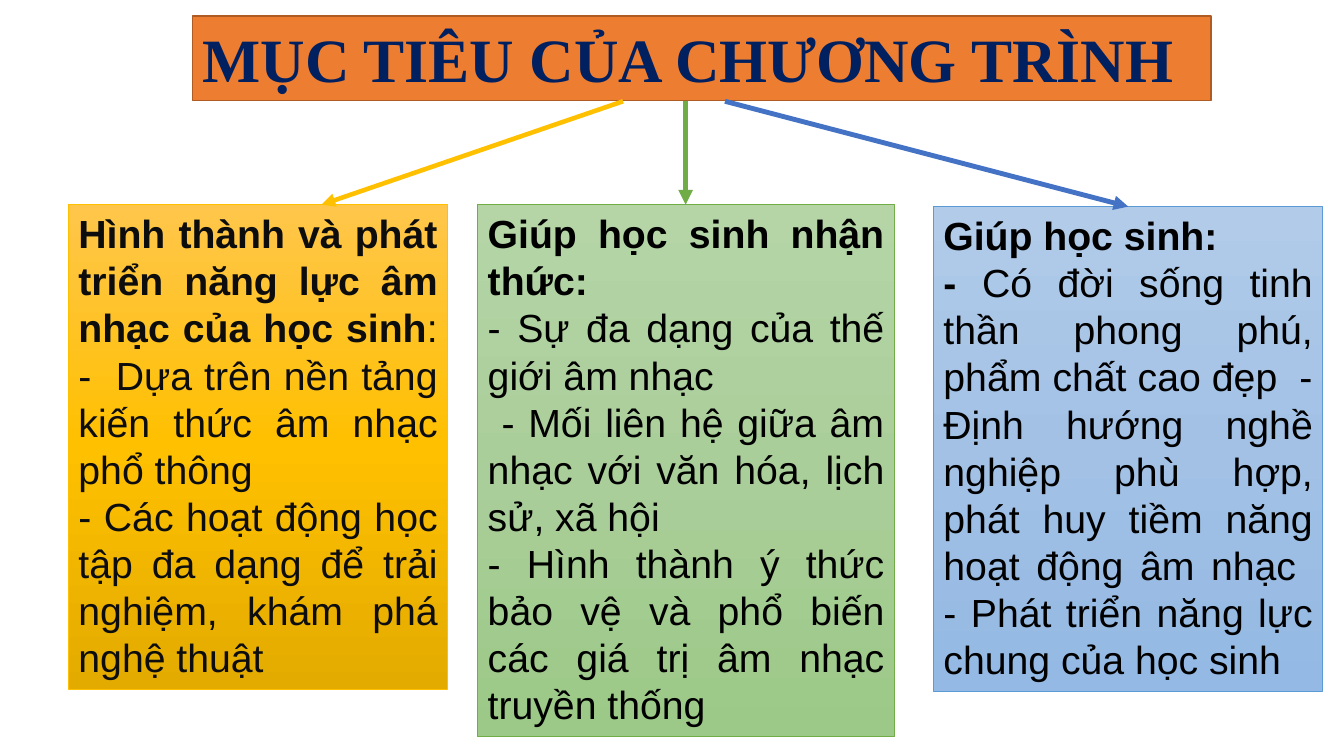
from lxml import etree
from pptx import Presentation
from pptx.dml.color import RGBColor
from pptx.enum.shapes import MSO_CONNECTOR, MSO_SHAPE
from pptx.enum.text import MSO_ANCHOR, PP_ALIGN
from pptx.oxml.ns import qn
from pptx.util import Inches, Pt

RECT = MSO_SHAPE.RECTANGLE
LINE = MSO_CONNECTOR.STRAIGHT
TOP = MSO_ANCHOR.TOP
LEFT = PP_ALIGN.LEFT
BOTH = PP_ALIGN.JUSTIFY
WIDE, HIGH = Inches(13.33), Inches(7.5)
BASE = 13.4

GOALS = [
    {
        "box": (5.1, 27.07, 28.2, 64.13), "ink": "0D0D0D", "edge": "FFC000",
        "fade": ("FFC64B", "FFC000", "E3AB00"),
        "arrow": (46.36, 23.93, "FFC000", 3.25),
        "text": [
            [("Hình thành và phát triển năng lực âm nhạc của học sinh", True), (": ", False)],
            [("-  Dựa trên nền tảng kiến thức âm nhạc phổ thông", False)],
            [("- Các hoạt động học tập đa dạng để trải nghiệm, khám phá nghệ thuật", False)],
        ],
    },
    {
        "box": (35.55, 27.07, 30.98, 70.4), "ink": "000000", "edge": "70AD47",
        "fade": ("B5D5A7", "AACE9A", "9CC987"),
        "arrow": (51.01, 51.01, "70AD47", 3.5),
        "text": [
            [("Giúp học sinh nhận thức: ", True)],
            [("- Sự đa dạng của thế giới âm nhạc", False)],
            [(" - Mối liên hệ giữa âm nhạc với văn hóa, lịch sử, xã hội", False)],
            [("- Hình thành ý thức bảo vệ và phổ biến các giá trị âm nhạc truyền thống", False)],
        ],
    },
    {
        "box": (69.46, 27.33, 28.95, 64.13), "ink": "000000", "edge": "5B9BD5",
        "fade": ("B1CBE9", "A3C1E5", "93B9E4"),
        "arrow": (53.94, 83.95, "4472C4", 3.5),
        "text": [
            [("Giúp học sinh: ", True)],
            [("- ", True),
             ("Có đời sống tinh thần phong phú, phẩm chất cao đẹp  - Định hướng nghề nghiệp "
              "phù hợp, phát huy tiềm năng hoạt động âm nhạc  - Phát triển năng lực chung "
              "của học sinh", False)],
        ],
    },
]


def tint(code):
    """Turn a hex string into a colour."""
    return RGBColor.from_string(code)


def across(share):
    """Turn a percentage of the slide width into a length."""
    return int(WIDE * share / 100)


def down(share):
    """Turn a percentage of the slide height into a length."""
    return int(HIGH * share / 100)


def blend(fill, codes):
    """Fill from top to bottom through evenly spaced colours."""
    fill.gradient()
    fill.gradient_angle = 270
    stops = fill._fill._gradFill.find(qn("a:gsLst"))
    for stop in list(stops):
        stops.remove(stop)
    for step, code in enumerate(codes):
        place = round(100000 * step / (len(codes) - 1))
        stop = etree.SubElement(stops, qn("a:gs"), pos=str(place))
        etree.SubElement(stop, qn("a:srgbClr"), val=code)


def add_box(slide, box, fade, edge, width):
    """Add a bordered box with a plain or blended fill."""
    x, y, w, h = box
    shape = slide.shapes.add_shape(RECT, across(x), down(y), across(w), down(h))
    shape.shadow.inherit = False
    if len(fade) == 1:
        shape.fill.solid()
        shape.fill.fore_color.rgb = tint(fade[0])
    else:
        blend(shape.fill, fade)
    shape.line.color.rgb = tint(edge)
    shape.line.width = Pt(width)
    return shape


def write(shape, text, face, size, ink, align):
    """Write paragraphs of plain and bold runs into a shape."""
    frame = shape.text_frame
    frame.word_wrap = True
    frame.vertical_anchor = TOP
    for row, parts in enumerate(text):
        para = frame.add_paragraph() if row else frame.paragraphs[0]
        para.alignment = align
        for words, bold in parts:
            run = para.add_run()
            run.text = words
            run.font.name = face
            run.font.size = Pt(size)
            run.font.bold = bold
            run.font.color.rgb = tint(ink)


def add_arrow(slide, start, end, code, width):
    """Draw an arrow from start to end."""
    ends = across(start[0]), down(start[1]), across(end[0]), down(end[1])
    arrow = slide.shapes.add_connector(LINE, *ends)
    arrow.line.color.rgb = tint(code)
    arrow.line.width = Pt(width)
    etree.SubElement(arrow.line._get_or_add_ln(), qn("a:tailEnd"), type="triangle")
    etree.SubElement(arrow._element.spPr, qn("a:effectLst"))


def main():
    """Build the slide of programme goals."""
    deck = Presentation()
    deck.slide_width, deck.slide_height = WIDE, HIGH
    slide = deck.slides.add_slide(deck.slide_layouts[6])
    title = add_box(slide, (14.33, 2.13, 75.77, 11.2), ["ED7D31"], "AF5C24", 1)
    write(title, [[("MỤC TIÊU CỦA CHƯƠNG TRÌNH", True)]],
          "Times New Roman", 44, "002060", LEFT)
    for goal in GOALS:
        shape = add_box(slide, goal["box"], goal["fade"], goal["edge"], 0.5)
        write(shape, goal["text"], "Arial", 28, goal["ink"], BOTH)
    for goal in GOALS:
        root, tip, code, width = goal["arrow"]
        add_arrow(slide, (root, BASE), (tip, goal["box"][1]), code, width)
    deck.save("out.pptx")


if __name__ == "__main__":
    main()
